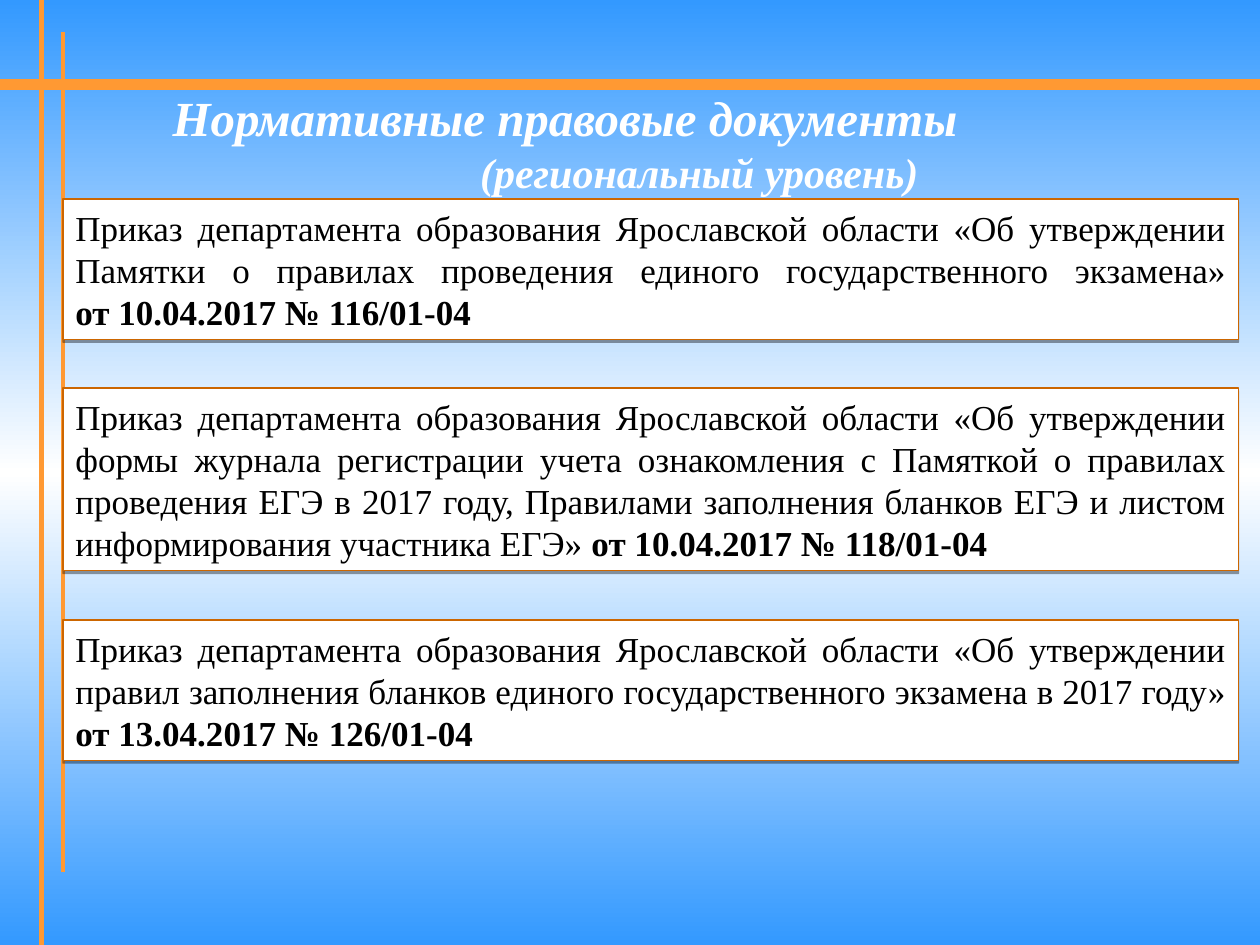
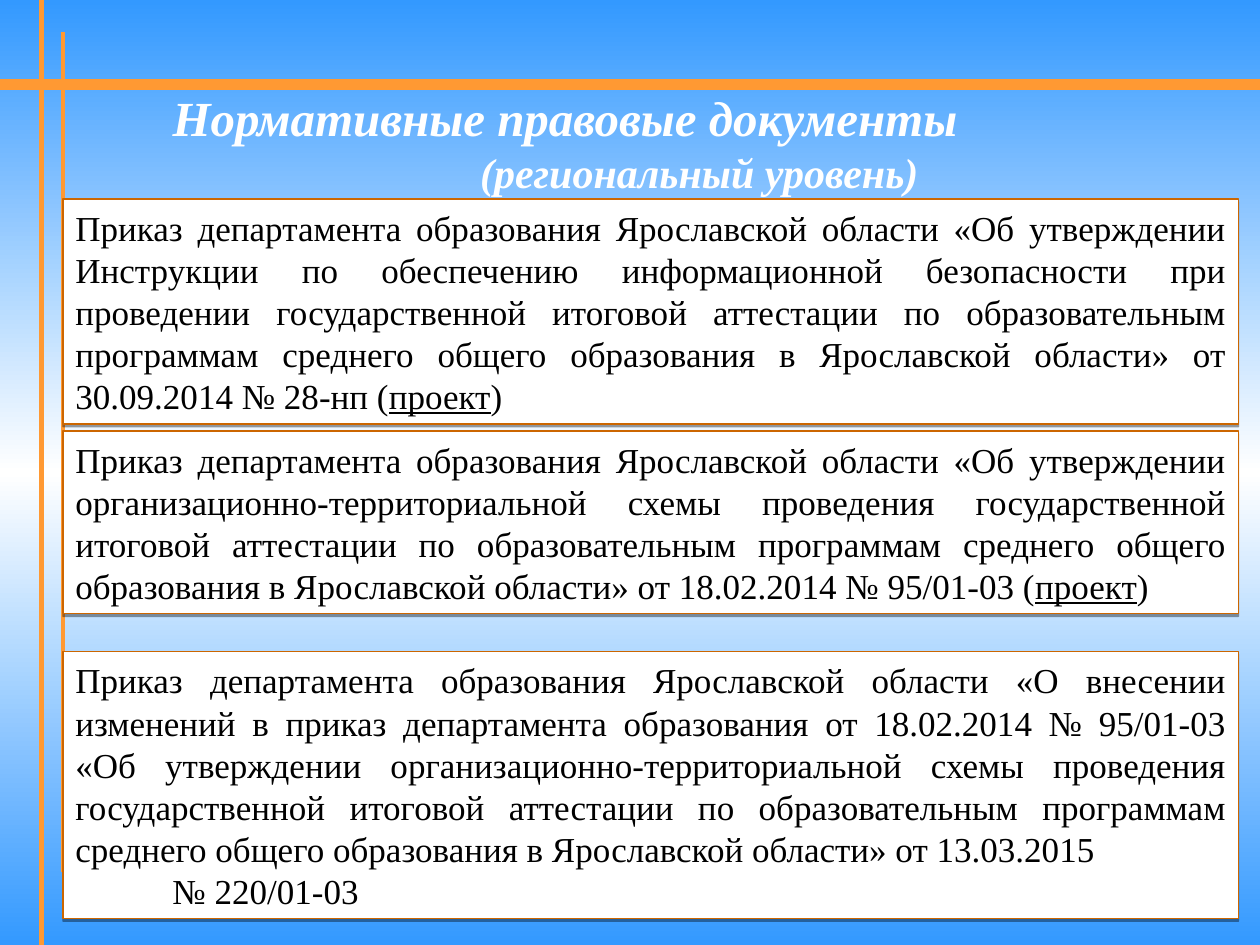
from copy import deepcopy

from lxml import etree
from pptx import Presentation
from pptx.dml.color import RGBColor
from pptx.enum.shapes import MSO_CONNECTOR, MSO_SHAPE
from pptx.enum.text import MSO_ANCHOR, MSO_AUTO_SIZE, PP_ALIGN
from pptx.oxml.ns import qn
from pptx.util import Inches, Pt

STRAIGHT = MSO_CONNECTOR.STRAIGHT
RECTANGLE = MSO_SHAPE.RECTANGLE
MIDDLE = MSO_ANCHOR.MIDDLE
NO_AUTOFIT = MSO_AUTO_SIZE.NONE
LEFT, CENTER, JUSTIFY = PP_ALIGN.LEFT, PP_ALIGN.CENTER, PP_ALIGN.JUSTIFY

BLUE = RGBColor(0x33, 0x99, 0xFF)
WHITE = RGBColor(0xFF, 0xFF, 0xFF)
BLACK = RGBColor(0x00, 0x00, 0x00)
ORANGE = RGBColor(0xFF, 0x99, 0x33)
BROWN = RGBColor(0xCC, 0x66, 0x00)

FONT = "Times New Roman"
NO_BREAK_SPACE = chr(160)
TITLE_ONLY = 5
CARD_LEFT, CARD_WIDTH = 0.5, 9.33
LINE_HEIGHT, CARD_PADDING = 0.335, 0.11

BARS = [
    ((0, 0.67), (10, 0.67), 6),
    ((0.33, 0), (0.33, 7.5), 3),
    ((0.5, 0.25), (0.5, 6.92), 2.25),
]

ORDER = "Приказ департамента образования Ярославской области "
SCHEME = (
    "организационно-территориальной схемы проведения государственной итоговой "
    "аттестации по образовательным программам среднего общего образования "
    "в Ярославской области» от "
)
BOLD = {"bold": True}
UNDERLINED = {"underline": True}

ORDERS_2017 = [
    (1.58, 3, [
        (ORDER + "«Об утверждении Памятки о правилах проведения единого "
         "государственного экзамена» ", {}),
        (f"от{NO_BREAK_SPACE}10.04.2017 № 116/01-04", BOLD),
    ]),
    (3.08, 4, [
        (ORDER + "«Об утверждении формы журнала регистрации учета ознакомления "
         "с Памяткой о правилах проведения ЕГЭ в 2017 году, Правилами заполнения "
         "бланков ЕГЭ и листом информирования участника ЕГЭ» ", {}),
        ("от 10.04.2017 № 118/01-04", BOLD),
    ]),
    (4.92, 3, [
        (ORDER + "«Об утверждении правил заполнения бланков единого "
         "государственного экзамена в 2017 году» ", {}),
        ("от 13.04.2017 № 126/01-04", BOLD),
    ]),
]

ORDERS_DRAFT = [
    (1.58, 5, [
        (ORDER + "«Об утверждении Инструкции по обеспечению информационной "
         "безопасности при проведении государственной итоговой аттестации по "
         "образовательным программам среднего общего образования в Ярославской "
         "области» от 30.09.2014 № 28-нп (", {}),
        ("проект", UNDERLINED),
        (")", {}),
    ]),
    (3.42, 4, [
        (ORDER + "«Об утверждении " + SCHEME + "18.02.2014 № 95/01-03 (", {}),
        ("проект", UNDERLINED),
        (")", {}),
    ]),
    (5.17, 6, [
        (ORDER + "«О внесении изменений в приказ департамента образования от "
         "18.02.2014 № 95/01-03 «Об утверждении " + SCHEME + "13.03.2015", {}),
    ]),
]


def add_text(paragraph, text, size=20, color=BLACK, bold=False, italic=False,
             underline=False):
    run = paragraph.add_run()
    run.text = text
    font = run.font
    font.name, font.size = FONT, Pt(size)
    font.bold, font.italic, font.underline = bold, italic, underline
    font.color.rgb = color


def indent(paragraph, left):
    properties = paragraph._p.get_or_add_pPr()
    properties.set("marL", str(Inches(left)))
    properties.set("indent", "0")


class Deck:
    def __init__(self):
        self.presentation = Presentation()
        self.presentation.slide_width = Inches(10)
        self.presentation.slide_height = Inches(7.5)
        self.master = self.presentation.slide_master
        self.slide = None
        self.set_background()

    def set_background(self):
        fill = self.master.background.fill
        fill.gradient()
        fill.gradient_angle = 270
        stop_list = self.master.element.find(".//" + qn("a:gsLst"))
        stop_list.append(deepcopy(stop_list[0]))
        for stop, position, color in zip(
                fill.gradient_stops, (0, 0.5, 1), (BLUE, WHITE, BLUE)):
            stop.position = position
            stop.color.rgb = color

    def add_slide(self):
        layout = self.presentation.slide_layouts[TITLE_ONLY]
        self.slide = self.presentation.slides.add_slide(layout)

    def move_bars_to_master(self):
        for start, end, width in BARS:
            bar = self.add_bar(start, end, width)
            self.master.shapes.element.append(bar.element)

    def add_bar(self, start, end, width):
        points = [Inches(value) for value in (*start, *end)]
        bar = self.slide.shapes.add_connector(STRAIGHT, *points)
        bar.line.color.rgb = ORANGE
        bar.line.width = Pt(width)
        etree.SubElement(bar.element.spPr, qn("a:effectLst"))
        return bar

    def add_title(self, heading, level):
        title = self.slide.shapes.title
        title.left, title.top = Inches(0.59), Inches(0.67)
        title.width, title.height = Inches(9.24), Inches(0.92)
        frame = title.text_frame
        frame.word_wrap = True
        frame.auto_size = NO_AUTOFIT
        frame.vertical_anchor = MIDDLE
        first, second = frame.paragraphs[0], frame.add_paragraph()
        first.alignment, second.alignment = LEFT, CENTER
        indent(first, 0.68)
        for paragraph, text, size in ((first, heading, 28), (second, level, 24)):
            add_text(paragraph, text, size=size, color=WHITE, bold=True, italic=True)

    def add_card(self, top, line_count, runs):
        height = line_count * LINE_HEIGHT + CARD_PADDING
        card = self.slide.shapes.add_shape(
            RECTANGLE, Inches(CARD_LEFT), Inches(top), Inches(CARD_WIDTH), Inches(height))
        card.fill.solid()
        card.fill.fore_color.rgb = WHITE
        card.line.color.rgb = BROWN
        card.line.width = Pt(0.75)
        self.add_shadow(card)
        frame = card.text_frame
        frame.word_wrap = True
        frame.vertical_anchor = MIDDLE
        paragraph = frame.paragraphs[0]
        paragraph.alignment = JUSTIFY
        for text, style in runs:
            add_text(paragraph, text, **style)
        return card

    def add_shadow(self, shape):
        shape.shadow.inherit = False
        effects = shape.element.spPr.find(qn("a:effectLst"))
        shadow = etree.SubElement(
            effects, qn("a:outerShdw"), blurRad="0", dist=str(Pt(1.6)),
            dir="5400000", rotWithShape="0")
        color = etree.SubElement(shadow, qn("a:srgbClr"), val=str(BLACK))
        etree.SubElement(color, qn("a:alpha"), val="38000")

    def add_orders_slide(self, orders):
        self.add_slide()
        self.add_title("Нормативные правовые документы", "(региональный уровень)")
        return [self.add_card(*order) for order in orders]


def main():
    deck = Deck()
    deck.add_orders_slide(ORDERS_2017)
    deck.move_bars_to_master()
    amendment = deck.add_orders_slide(ORDERS_DRAFT)[-1]
    number = amendment.text_frame.add_paragraph()
    number.alignment = LEFT
    indent(number, 0.77)
    add_text(number, "№ 220/01-03")
    deck.presentation.save("out.pptx")


if __name__ == "__main__":
    main()
